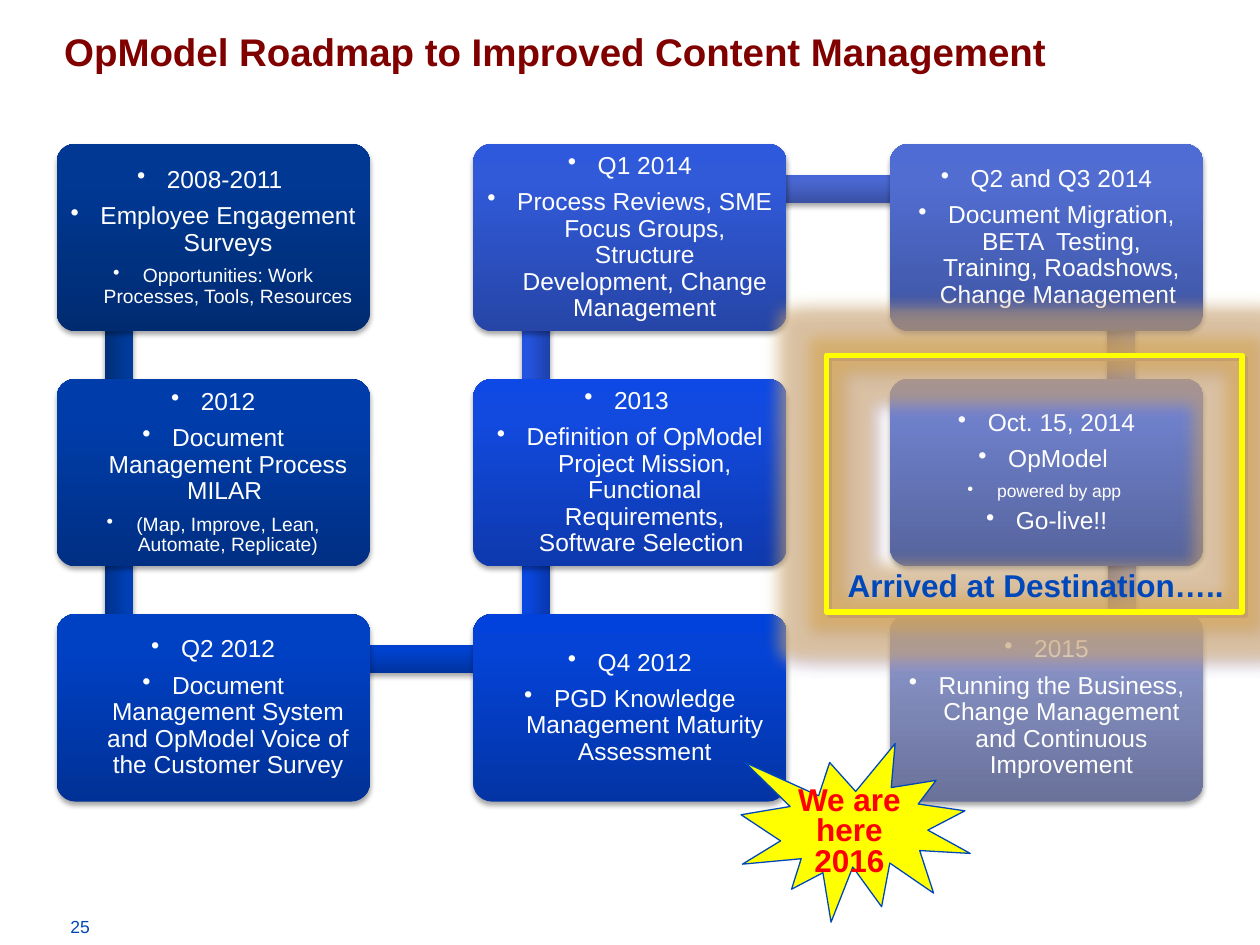
from dataclasses import dataclass
from typing import NamedTuple

from lxml import etree
from pptx import Presentation
from pptx.dml.color import RGBColor
from pptx.enum import shapes, text
from pptx.oxml import ns
from pptx.util import Cm, Pt


@dataclass(frozen=True)
class Theme:
    font: str = "Arial"
    white: str = "FFFFFF"
    blue: str = "0048B9"
    maroon: str = "800000"
    red: str = "FF0000"
    yellow: str = "FFFF00"
    gold: str = "E5A823"
    lilac: str = "9090F3"
    black: str = "000000"
    title: int = 22
    label: int = 18
    body: int = 14
    small: int = 11
    tiny: int = 10


class Line(NamedTuple):
    text: str
    size: int = 14


class Bar(NamedTuple):
    x: float
    y: float
    length: float
    turn: int
    tones: str


class Card(NamedTuple):
    col: int
    row: int
    tones: str
    lines: list[Line]
    bar: Bar | None = None


T = Theme()
STOPS = (0, 80, 100)
LEFT, TOP, STEP_X, STEP_Y = 1.14, 2.9, 8.4, 4.74
CARD_W, CARD_H, THICK = 6.32, 3.78, 0.57
SHORT, LONG = 4.7, 8.38

CARDS = [
    Card(0, 0, "002B71 003893 003994",
         [Line("2008-2011 "), Line("Employee Engagement Surveys"),
          Line("Opportunities: Work Processes, Tools, Resources", T.small)],
         Bar(2.4, 6.2, SHORT, 90, "002E77 003B9B 003C9B")),
    Card(0, 1, "002F83 003DAB 003DAB",
         [Line("2012"), Line("Document Management Process MILAR "),
          Line("(Map, Improve, Lean, Automate, Replicate)", T.small)],
         Bar(2.4, 10.92, SHORT, 90, "00318B 003FB5 0040B6")),
    Card(0, 2, "003196 0040C3 0040C3",
         [Line("Q2 2012"),
          Line("Document Management System and OpModel Voice of the Customer Survey")],
         Bar(6.63, 13.28, LONG, 0, "00339F 0042CF 0042D0")),
    Card(1, 2, "0334A5 0443D6 0042DB",
         [Line("Q4 2012"), Line("PGD Knowledge Management Maturity Assessment")],
         Bar(10.81, 10.92, SHORT, 270, "0837AC 0A47DF 0646E4")),
    Card(1, 1, "0E39AD 124AE0 0E49E5",
         [Line("2013 "),
          Line("Definition of OpModel Project Mission, Functional Requirements, "
               "Software Selection ")],
         Bar(10.81, 6.2, SHORT, 270, "1D41AB 2554DE 2253E3")),
    Card(1, 0, "2645A7 315AD9 2E59DD",
         [Line("Q1 2014"),
          Line("Process Reviews, SME Focus Groups, Structure Development, "
               "Change Management")],
         Bar(15.01, 3.81, LONG, 0, "3950A3 4A68D3 4767D7")),
    Card(2, 0, "3E54A1 516DD1 4F6CD4",
         [Line("Q2 and Q3 2014"),
          Line("Document Migration, BETA  Testing, Training, Roadshows, "
               "Change Management ")],
         Bar(22.59, 6.5, SHORT, 90, "53619D 6B7ECC 6A7DCF")),
    Card(2, 1, "55639C 6F80CB 6D80CE",
         [Line("Oct. 15, 2014"), Line("OpModel "),
          Line("powered by app ", T.tiny), Line("Go-live!!")],
         Bar(22.62, 10.85, SHORT, 90, "6A719A 8993C8 8993CA")),
    Card(2, 2, "6A729A 8994C8 8993CA",
         [Line("2015"),
          Line("Running the Business, Change Management and Continuous Improvement")]),
]


def node(parent, tag: str, **attrs):
    return etree.SubElement(parent, ns.qn(tag), {k: str(v) for k, v in attrs.items()})


def tint(parent, tone: str, alpha: int = 100) -> None:
    color = node(parent, "a:srgbClr", val=tone)
    if alpha < 100:
        node(color, "a:alpha", val=alpha * 1000)


def effects(shape):
    shape.shadow.inherit = False
    return shape._element.spPr.find(ns.qn("a:effectLst"))


def shade(shape, tone: str, alpha: int, blur: float, dist: float, angle: int) -> None:
    drop = node(effects(shape), "a:outerShdw", blurRad=Pt(blur), dist=Pt(dist),
                dir=angle * 60000, algn="ctr", rotWithShape=0)
    tint(drop, tone, alpha)


def block(slide, kind, box: tuple, tones: str):
    shape = slide.shapes.add_shape(kind, *map(Cm, box))
    shape.line.fill.background()
    shape.fill.gradient()
    shape.fill.gradient_angle = 90
    stops = shape._element.spPr.find(ns.qn("a:gradFill")).find(ns.qn("a:gsLst"))
    for old in list(stops):
        stops.remove(old)
    for pos, tone in zip(STOPS, tones.split()):
        tint(node(stops, "a:gs", pos=pos * 1000), tone)
    shade(shape, T.black, 35, 3.1, 1.8, 90)
    return shape


def write(frame, lines: list[Line], *, color: str, bold: bool = False,
          align=text.PP_ALIGN.LEFT, anchor=text.MSO_ANCHOR.TOP,
          spacing: float = 1.0, bullet: bool = False, margin: float | None = None) -> None:
    frame.word_wrap = True
    frame.auto_size = text.MSO_AUTO_SIZE.NONE
    frame.vertical_anchor = anchor
    if margin is not None:
        frame.margin_left = frame.margin_right = Cm(margin)
        frame.margin_top = frame.margin_bottom = Cm(margin)
    for i, line in enumerate(lines):
        para = frame.paragraphs[0] if i == 0 else frame.add_paragraph()
        para.alignment = align
        para.line_spacing = spacing
        if bullet:
            para.space_after = Pt(round(line.size * 0.39, 1))
            props = para._p.get_or_add_pPr()
            props.set("marL", str(Cm(0.6)))
            props.set("indent", str(-Cm(0.6)))
            node(props, "a:buChar", char="•")
        run = para.add_run()
        run.text = line.text
        font = run.font
        font.name, font.size, font.bold = T.font, Pt(line.size), bold
        font.color.rgb = RGBColor.from_string(color)


def label(slide, box: tuple, line: Line, **style) -> None:
    shape = slide.shapes.add_textbox(*map(Cm, box))
    write(shape.text_frame, [line], **style)


def draw_bar(slide, bar: Bar) -> None:
    box = (bar.x - bar.length / 2, bar.y - THICK / 2, bar.length, THICK)
    shape = block(slide, shapes.MSO_SHAPE.RECTANGLE, box, bar.tones)
    shape.rotation = bar.turn


def draw_card(slide, card: Card) -> None:
    if card.bar:
        draw_bar(slide, card.bar)
    box = (LEFT + card.col * STEP_X, TOP + card.row * STEP_Y, CARD_W, CARD_H)
    shape = block(slide, shapes.MSO_SHAPE.ROUNDED_RECTANGLE, box, card.tones)
    shape.adjustments[0] = 0.1
    write(shape.text_frame, card.lines, color=T.white, align=text.PP_ALIGN.CENTER,
          anchor=text.MSO_ANCHOR.MIDDLE, spacing=0.9, bullet=True, margin=0.15)


def draw_frame(slide) -> None:
    frame = slide.shapes.add_shape(shapes.MSO_SHAPE.RECTANGLE,
                                   *map(Cm, (16.66, 7.16, 8.38, 5.18)))
    frame.fill.background()
    frame.line.color.rgb = RGBColor.from_string(T.yellow)
    frame.line.width = Pt(3)
    tint(node(effects(frame), "a:glow", rad=Pt(18)), T.gold, 40)
    drop = node(frame._element.spPr.find(ns.qn("a:effectLst")), "a:outerShdw",
                dist=Pt(2.8), dir=45 * 60000, algn="ctr", rotWithShape=0)
    tint(drop, T.lilac)


def draw_star(slide) -> None:
    star = slide.shapes.add_shape(shapes.MSO_SHAPE.EXPLOSION1,
                                  *map(Cm, (14.94, 14.99, 4.62, 3.6)))
    star.shadow.inherit = False
    star.fill.solid()
    star.fill.fore_color.rgb = RGBColor.from_string(T.yellow)
    star.line.color.rgb = RGBColor.from_string(T.blue)
    star.line.width = Pt(0.75)
    label(slide, (15.6, 15.75, 3.05, 2.11), Line("We are here 2016", T.label),
          color=T.red, bold=True, align=text.PP_ALIGN.CENTER, spacing=0.8)


def main() -> None:
    deck = Presentation()
    deck.slide_width, deck.slide_height = Cm(25.4), Cm(19.05)
    slide = deck.slides.add_slide(deck.slide_layouts[5])
    title = slide.shapes.title
    title.left, title.top, title.width, title.height = map(Cm, (1.04, 0.61, 22.94, 1.02))
    write(title.text_frame, [Line("OpModel Roadmap to Improved Content Management", T.title)],
          color=T.maroon, bold=True, spacing=0.8)
    label(slide, (1.17, 18.34, 5.87, 0.69), Line("25", T.tiny), color=T.blue)
    for card in CARDS:
        draw_card(slide, card)
    draw_frame(slide)
    draw_star(slide)
    label(slide, (16.84, 11.43, 8.5, 0.86), Line("Arrived at Destination…..", T.label),
          color=T.blue, bold=True, spacing=0.8)
    deck.save("out.pptx")


if __name__ == "__main__":
    main()
